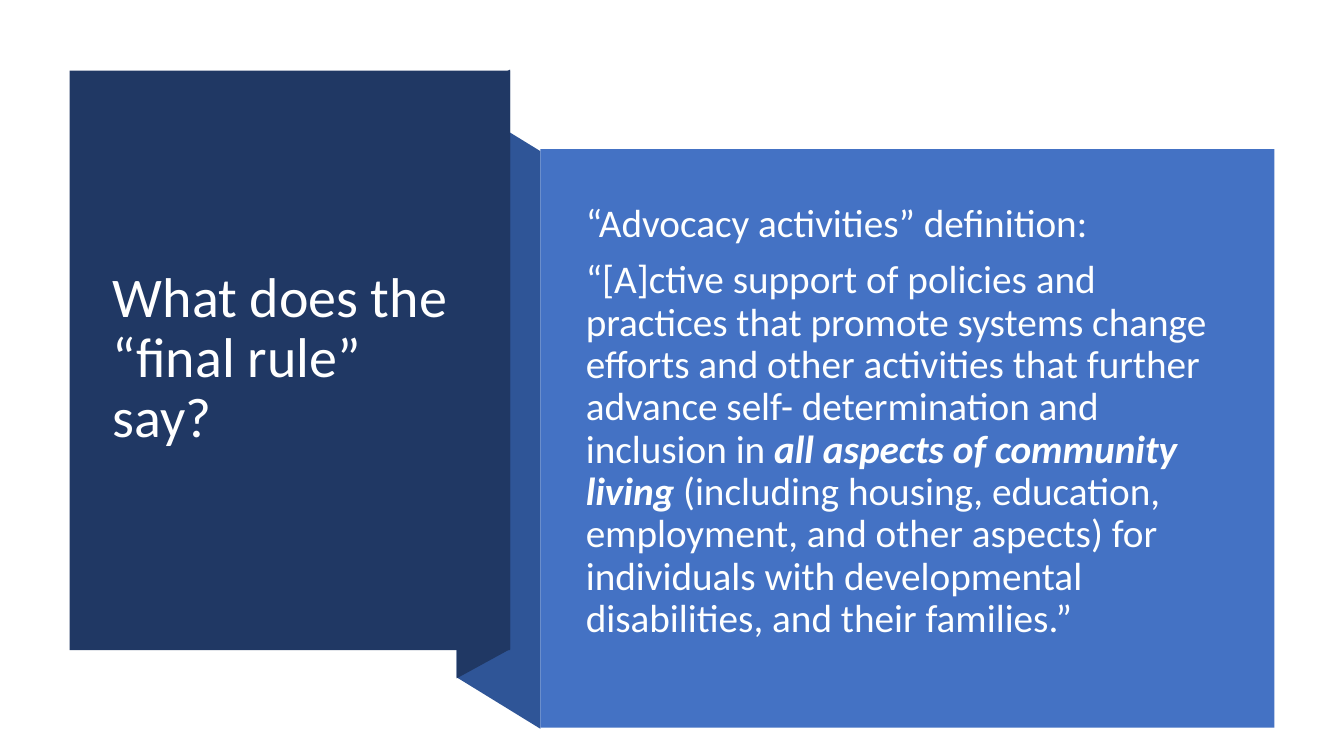
from pptx import Presentation
from pptx.dml.color import RGBColor
from pptx.enum.shapes import MSO_SHAPE
from pptx.enum.text import MSO_ANCHOR, MSO_AUTO_SIZE, PP_ALIGN
from pptx.oxml.ns import qn
from pptx.util import Inches, Pt

RECTANGLE = MSO_SHAPE.RECTANGLE
MIDDLE = MSO_ANCHOR.MIDDLE
NO_AUTOFIT = MSO_AUTO_SIZE.NONE
LEFT = PP_ALIGN.LEFT

# Content: each paragraph is a list of (text, emphasised) runs
TITLE = [[("What does the “final rule” say?", False)]]
DEFINITION = [
    [("“Advocacy activities” definition:", False)],
    [
        ("“[A]ctive support of policies and practices that promote systems change "
         "efforts and other activities that further advance self- determination "
         "and inclusion in ", False),
        ("all aspects of community living", True),
        (" (including housing, education, employment, and other aspects) for "
         "individuals with developmental disabilities, and their families.”", False),
    ],
]

THEME = {
    "font": "Calibri",
    "navy": RGBColor(0x20, 0x38, 0x64),
    "fold": RGBColor(0x2F, 0x55, 0x97),
    "blue": RGBColor(0x44, 0x72, 0xC4),
    "title": {"size": Pt(40), "color": RGBColor(0xFF, 0xFF, 0xFF)},
    "body": {"size": Pt(28), "color": RGBColor(0xFE, 0xFF, 0xFF)},
}

# Layout in inches: left, top, width, height
TITLE_PANEL = (0.69, 0.7, 4.37, 5.75)
BODY_PANEL = (5.36, 1.48, 7.28, 5.74)
TITLE_BOX = (1.02, 1.07, 3.71, 4.99)
BODY_BOX = (5.71, 1.88, 6.51, 5.12)
BODY_BOTTOM_INSET = 0.55

# Ribbon folds: left x, right x, top y at each side, height of the sides
FOLDS = [
    (4.53, 5.36, 0.99, 1.5, 5.73, THEME["fold"]),
    (4.53, 5.06, 0.98, 0.69, 5.75, THEME["navy"]),
]


def paint(shape, color):
    shape.shadow.inherit = False
    shape.fill.solid()
    shape.fill.fore_color.rgb = color
    shape.line.fill.background()


def add_fold(slide, left, right, left_top, right_top, height, color):
    corners = [(right, right_top + height), (left, left_top + height),
               (left, left_top), (right, right_top)]
    points = [(Inches(x), Inches(y)) for x, y in corners]
    builder = slide.shapes.build_freeform(*points[0])
    builder.add_line_segments(points[1:], close=True)
    paint(builder.convert_to_shape(), color)


def add_panel(slide, box, color):
    paint(slide.shapes.add_shape(RECTANGLE, *map(Inches, box)), color)


def fill_placeholder(slide, holder, box, paragraphs, style, space_before):
    # Bring the text in front of everything drawn so far
    slide.shapes.element.append(holder.element)
    holder.left, holder.top, holder.width, holder.height = map(Inches, box)
    frame = holder.text_frame
    frame_format = {"word_wrap": True, "auto_size": NO_AUTOFIT,
                    "vertical_anchor": MIDDLE}
    for name, value in frame_format.items():
        setattr(frame, name, value)
    paragraph_format = {"alignment": LEFT, "line_spacing": 0.9,
                        "space_before": space_before, "space_after": Pt(0)}
    for index, runs in enumerate(paragraphs):
        paragraph = frame.add_paragraph() if index else frame.paragraphs[0]
        for name, value in paragraph_format.items():
            setattr(paragraph, name, value)
        # No bullet, no hanging indent
        properties = paragraph._p.get_or_add_pPr()
        properties.set("marL", "0")
        properties.set("indent", "0")
        properties.append(properties.makeelement(qn("a:buNone"), {}))
        for text, emphasised in runs:
            run = paragraph.add_run()
            run.text = text
            font_format = {"name": THEME["font"], "size": style["size"],
                           "bold": emphasised, "italic": emphasised}
            for name, value in font_format.items():
                setattr(run.font, name, value)
            run.font.color.rgb = style["color"]


def main():
    deck = Presentation()
    deck.slide_width, deck.slide_height = Inches(13.33), Inches(7.5)
    slide = deck.slides.add_slide(deck.slide_layouts[1])
    title, body = slide.shapes.title, slide.placeholders[1]

    # Folded ribbon and title panel
    for fold in FOLDS:
        add_fold(slide, *fold)
    add_panel(slide, TITLE_PANEL, THEME["navy"])
    fill_placeholder(slide, title, TITLE_BOX, TITLE, THEME["title"], Pt(0))

    # Definition panel
    add_panel(slide, BODY_PANEL, THEME["blue"])
    fill_placeholder(slide, body, BODY_BOX, DEFINITION, THEME["body"], Pt(10))
    body.text_frame.margin_bottom = Inches(BODY_BOTTOM_INSET)

    deck.save("out.pptx")


if __name__ == "__main__":
    main()
